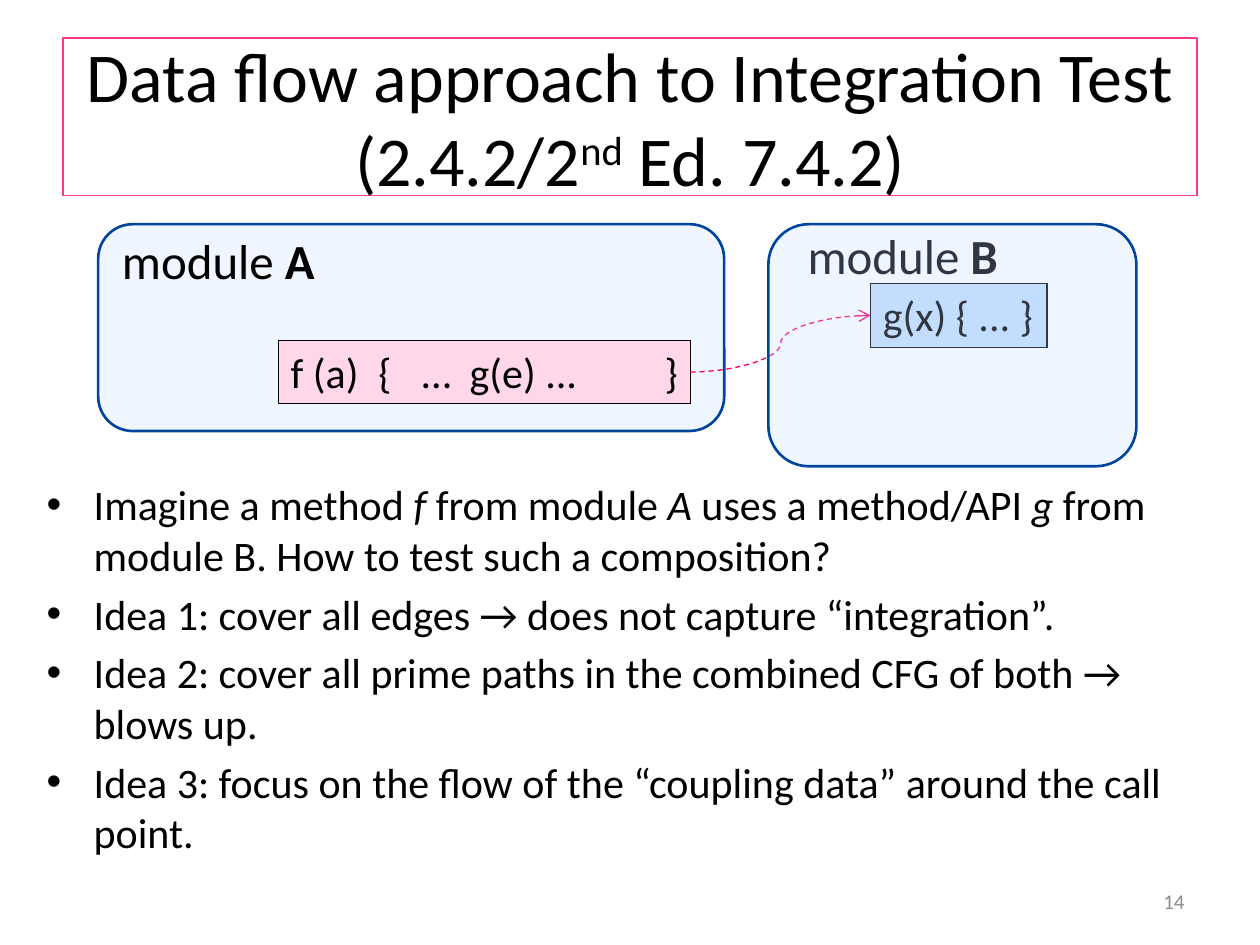
from lxml import etree
from pptx import Presentation
from pptx.dml.color import RGBColor
from pptx.enum.dml import MSO_LINE
from pptx.enum.shapes import MSO_CONNECTOR, MSO_SHAPE as SHAPE
from pptx.enum.text import MSO_ANCHOR as ANCHOR, MSO_AUTO_SIZE as AUTO, PP_ALIGN as ALIGN
from pptx.oxml.ns import qn
from pptx.util import Cm, Pt

C = {"black": "000000", "white": "FFFFFF", "title_line": "FF388C", "navy": "00449E",
     "blue": "C3DDFF", "pink": "FFD7E8", "arrow": "F90069", "gray": "8C8C8C"}


def write(p, text, size=24, color="black", bold=None, italic=None, sup=False):
    """Add one formatted run to a paragraph."""
    r = p.add_run()
    r.text = text
    f = r.font
    f.name, f.size, f.bold, f.italic = "Calibri", Pt(size), bold, italic
    f.color.rgb = RGBColor.from_string(C[color])
    if sup:
        r._r.get_or_add_rPr().set("baseline", "30000")


def add_box(kind, box, fill, line, width, alpha=None):
    """Add a filled, outlined shape without a shadow."""
    sp = s.shapes.add_shape(kind, *map(Cm, box))
    sp.shadow.inherit = False
    sp.fill.solid()
    sp.fill.fore_color.rgb = RGBColor.from_string(C[fill])
    if alpha:
        clr = sp.fill._xPr.find(qn("a:solidFill"))[0]
        etree.SubElement(clr, qn("a:alpha")).set("val", str(alpha * 1000))
    sp.line.color.rgb = RGBColor.from_string(C[line])
    sp.line.width = Pt(width)
    return sp


prs = Presentation()
prs.slide_width, prs.slide_height = Cm(25.4), Cm(19.05)
s = prs.slides.add_slide(prs.slide_layouts[5])

# Module A frame, behind everything else
add_box(SHAPE.ROUNDED_RECTANGLE, (1.98, 4.52, 12.62, 4.17), "blue", "navy", 1.5, alpha=25)

# Title, moved in front of the frame
title = s.shapes.title
s.shapes._spTree.append(title._element)
title.left, title.top, title.width, title.height = Cm(1.27), Cm(0.76), Cm(22.86), Cm(3.18)
title.fill.solid()
title.fill.fore_color.rgb = RGBColor.from_string(C["white"])
title.line.color.rgb = RGBColor.from_string(C["title_line"])
title.line.width = Pt(1)
tf = title.text_frame
tf.auto_size, tf.vertical_anchor, tf.word_wrap = AUTO.NONE, ANCHOR.MIDDLE, True
p = tf.paragraphs[0]
p.alignment = ALIGN.CENTER
write(p, "Data flow approach to Integration Test (2.4.2/2", size=40)
write(p, "nd", size=40, sup=True)
write(p, " Ed. 7.4.2)", size=40)

# Bullets: every second piece of a line is italic
bullets = [
    ("Imagine a method ", "f", " from module ", "A", " uses a method/API ", "g",
     " from module B. How to test such a composition?"),
    ("Idea 1: cover all edges → does not capture “integration”.",),
    ("Idea 2: cover all prime paths in the combined CFG of both → blows up.",),
    ("Idea 3: focus on the flow of the “coupling data” around the call point.",),
]
tf = s.shapes.add_textbox(Cm(0.69), Cm(9.53), Cm(23.44), Cm(8.94)).text_frame
tf.word_wrap = True
for i, pieces in enumerate(bullets):
    p = tf.add_paragraph() if i else tf.paragraphs[0]
    p.space_before = Pt(4.8)
    pPr = p._p.get_or_add_pPr()
    pPr.set("marL", str(Cm(0.95)))
    pPr.set("indent", str(Cm(-0.95)))
    etree.SubElement(pPr, qn("a:buFont")).set("typeface", "Arial")
    etree.SubElement(pPr, qn("a:buChar")).set("char", "•")
    for j, piece in enumerate(pieces):
        write(p, piece, italic=j % 2 == 1)

# Slide number
tf = s.shapes.add_textbox(Cm(18.21), Cm(17.65), Cm(5.92), Cm(1.02)).text_frame
tf.word_wrap, tf.vertical_anchor = True, ANCHOR.MIDDLE
tf.paragraphs[0].alignment = ALIGN.RIGHT
write(tf.paragraphs[0], "14", size=12, color="gray")

# Methods f and g, with tab stops spacing out the parts of f
methods = []
for box, fill, text, stops in [
    ((5.61, 6.86, 8.31, 1.28), "pink", "f (a)\t{\t...\tg(e) ...\t}", (1.77, 2.62, 3.61, 7.54)),
    ((17.55, 5.72, 3.56, 1.28), "blue", "g(x) { ... }", ()),
]:
    sp = add_box(SHAPE.RECTANGLE, box, fill, "black", 0.75)
    tf = sp.text_frame
    tf.word_wrap, tf.vertical_anchor, tf.margin_right = True, ANCHOR.TOP, 0
    p = tf.paragraphs[0]
    p.alignment = ALIGN.LEFT
    if stops:
        tabs = etree.SubElement(p._p.get_or_add_pPr(), qn("a:tabLst"))
        for stop in stops:
            etree.SubElement(tabs, qn("a:tab"), pos=str(Cm(stop)), algn="l")
    write(p, text)
    methods.append(sp)

# Call arrow from f to g
call = s.shapes.add_connector(MSO_CONNECTOR.CURVE, Cm(13.92), Cm(7.5), Cm(17.55), Cm(6.36))
call.begin_connect(methods[0], 3)
call.end_connect(methods[1], 1)
call.line.color.rgb = RGBColor.from_string(C["arrow"])
call.line.width = Pt(0.75)
call.line.dash_style = MSO_LINE.DASH
etree.SubElement(call.line._get_or_add_ln(), qn("a:tailEnd")).set("type", "arrow")
etree.SubElement(call._element.spPr, qn("a:effectLst"))

# Module labels
for name, box in [("B", (16.03, 4.42, 4.39, 1.45)), ("A", (2.21, 4.52, 4.45, 1.45))]:
    tf = s.shapes.add_textbox(*map(Cm, box)).text_frame
    tf.word_wrap = False
    write(tf.paragraphs[0], "module ", size=28)
    write(tf.paragraphs[0], name, size=28, bold=True)

# Module B frame, a translucent veil over its contents
add_box(SHAPE.ROUNDED_RECTANGLE, (15.49, 4.52, 7.42, 4.88), "blue", "navy", 1.5, alpha=25)

prs.save("out.pptx")
